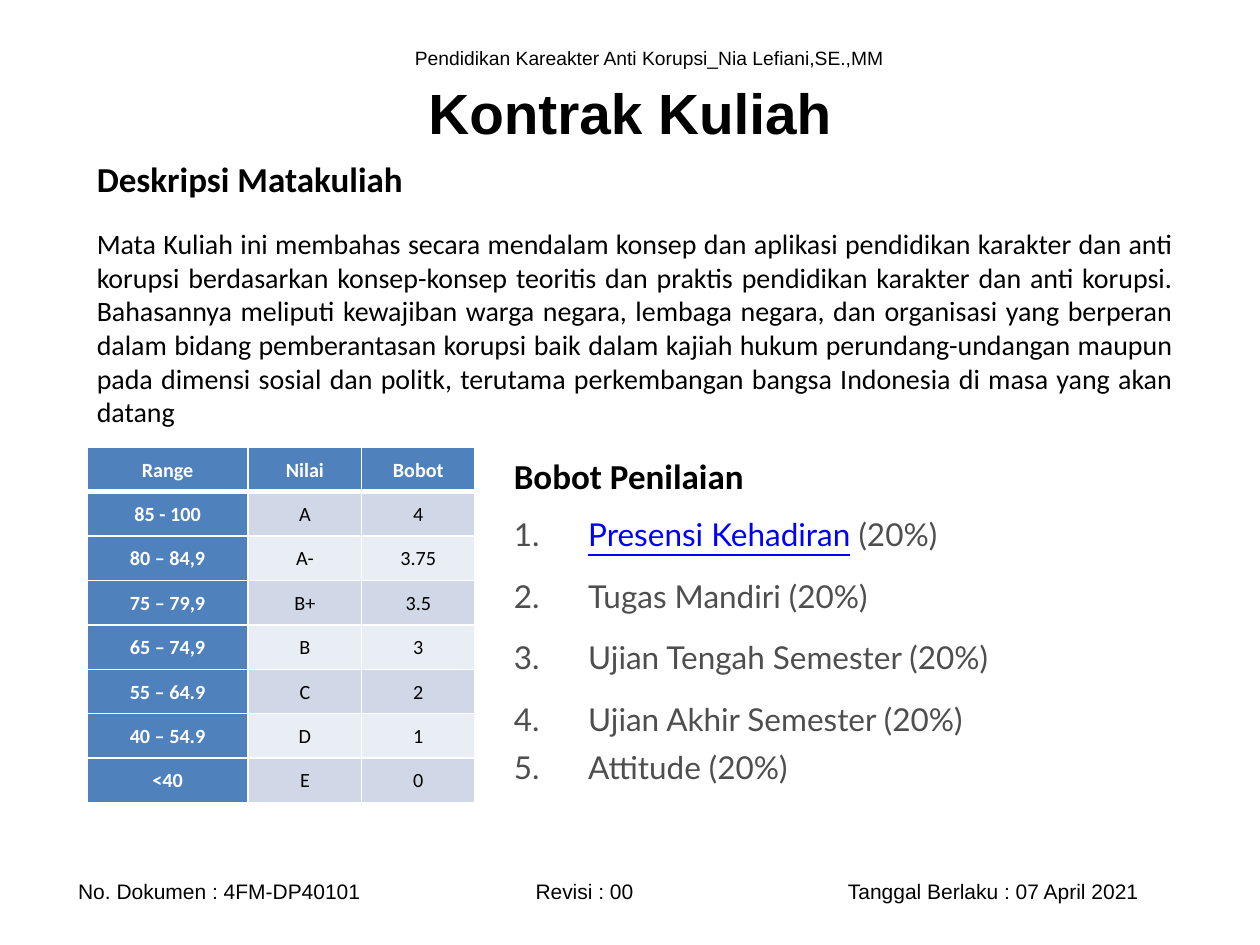
"""Build the course contract slide with its grading table and assessment weights."""
import dataclasses

import lxml.etree
import pptx
import pptx.dml.color
import pptx.enum.text
import pptx.oxml.ns
import pptx.util

ALIGN = pptx.enum.text.PP_ALIGN
MIDDLE = pptx.enum.text.MSO_ANCHOR.MIDDLE
TOP = pptx.enum.text.MSO_ANCHOR.TOP
COLUMNS, ROWS = 100, 75


@dataclasses.dataclass(frozen=True)
class Theme:
    display: str = "Arial"
    body: str = "Calibri"
    list_font: str = "Lato"
    ink: str = "000000"
    white: str = "FFFFFF"
    muted: str = "4E4E4E"
    link: str = "0000FF"
    accent: str = "4F81BD"
    bands: tuple = ("D0D8E8", "E9EDF4")
    title_size: float = 32.4
    heading_size: float = 20
    list_size: float = 18
    body_size: float = 16
    footer_size: float = 12
    table_size: float = 11.5
    header_size: float = 11


def add_xml(parent, tag, **attributes):
    return lxml.etree.SubElement(parent, pptx.oxml.ns.qn(tag), attributes)


class SlideBuilder:
    def __init__(self, deck, theme):
        self.deck = deck
        self.theme = theme
        self.slide = deck.slides.add_slide(deck.slide_layouts[5])

    def place(self, left, top, width, height):
        column = self.deck.slide_width / COLUMNS
        row = self.deck.slide_height / ROWS
        return [int(left * column), int(top * row), int(width * column), int(height * row)]

    def style(self, run, size, font, color, bold=False):
        run.font.size = pptx.util.Pt(size)
        run.font.name = font
        run.font.bold = bold
        run.font.color.rgb = pptx.dml.color.RGBColor.from_string(color)

    def title(self, area, text):
        title = self.slide.shapes.title
        title.left, title.top, title.width, title.height = self.place(*area)
        frame = title.text_frame
        frame.text = text
        frame.auto_size = pptx.enum.text.MSO_AUTO_SIZE.NONE
        frame.vertical_anchor = MIDDLE
        paragraph = frame.paragraphs[0]
        paragraph.alignment = ALIGN.CENTER
        paragraph.line_spacing = 0.9
        self.style(paragraph.runs[0], self.theme.title_size, self.theme.display, self.theme.ink, True)

    def frame(self, area, anchor=TOP):
        frame = self.slide.shapes.add_textbox(*self.place(*area)).text_frame
        frame.word_wrap = True
        frame.vertical_anchor = anchor
        return frame

    def text(self, area, text, size, font, align=ALIGN.LEFT, bold=False, anchor=TOP):
        frame = self.frame(area, anchor)
        frame.text = text
        paragraph = frame.paragraphs[0]
        paragraph.alignment = align
        self.style(paragraph.runs[0], size, font, self.theme.ink, bold)
        return frame

    def heading(self, area, text):
        self.text(area, text, self.theme.heading_size, self.theme.body, bold=True)

    def footer(self, area, parts, inset, stops):
        frame = self.text(area, "\t".join(parts), self.theme.footer_size, self.theme.display, anchor=MIDDLE)
        frame.margin_left = pptx.util.Inches(inset)
        tabs = add_xml(frame.paragraphs[0]._p.get_or_add_pPr(), "a:tabLst")
        for stop in stops:
            add_xml(tabs, "a:tab", pos=str(pptx.util.Inches(stop)), algn="l")

    def numbered_list(self, area, items, indent):
        theme = self.theme
        frame = self.frame(area)
        for index, (label, weight, linked) in enumerate(items):
            paragraph = frame.paragraphs[0] if index == 0 else frame.add_paragraph()
            if index < len(items) - 1:
                paragraph.line_spacing = 1.07
                paragraph.space_before = pptx.util.Pt(6 if index else 0)
                paragraph.space_after = pptx.util.Pt(6)
            properties = paragraph._p.get_or_add_pPr()
            properties.set("marL", str(pptx.util.Inches(indent)))
            properties.set("indent", str(-pptx.util.Inches(indent)))
            add_xml(add_xml(properties, "a:buClr"), "a:srgbClr", val=theme.muted)
            add_xml(properties, "a:buFont", typeface=theme.list_font)
            add_xml(properties, "a:buAutoNum", type="arabicPeriod")
            for text, highlighted in ((label, linked), (f" ({weight})", False)):
                run = paragraph.add_run()
                run.text = text
                self.style(run, theme.list_size, theme.list_font, theme.link if highlighted else theme.muted)
                run.font.underline = highlighted

    def borders(self, cell, bottom):
        properties = cell._tc.get_or_add_tcPr()
        for side, points in (("L", 1), ("R", 1), ("T", 1), ("B", bottom)):
            line = add_xml(properties, f"a:ln{side}", w=str(pptx.util.Pt(points)))
            add_xml(add_xml(line, "a:solidFill"), "a:srgbClr", val=self.theme.white)

    def table(self, area, rows, widths):
        theme = self.theme
        table = self.slide.shapes.add_table(len(rows), len(widths), *self.place(*area)).table
        table.first_col = True
        table.horz_banding = False
        for column, width in zip(table.columns, widths):
            column.width = pptx.util.Inches(width)
        for row_index, values in enumerate(rows):
            for column_index, value in enumerate(values):
                cell = table.cell(row_index, column_index)
                is_header = row_index == 0 or column_index == 0
                cell.text = value
                cell.vertical_anchor = MIDDLE
                cell.margin_left = cell.margin_right = cell.margin_top = cell.margin_bottom = 0
                self.borders(cell, 1 if row_index else 3)
                cell.fill.solid()
                band = theme.accent if is_header else theme.bands[(row_index - 1) % 2]
                cell.fill.fore_color.rgb = pptx.dml.color.RGBColor.from_string(band)
                paragraph = cell.text_frame.paragraphs[0]
                paragraph.alignment = ALIGN.CENTER
                paragraph.line_spacing = 1.07
                color = theme.white if is_header else theme.ink
                self.style(paragraph.runs[0], theme.table_size, theme.body, color, is_header)


DESCRIPTION = (
    "Mata Kuliah ini membahas secara mendalam konsep dan aplikasi pendidikan karakter dan anti korupsi "
    "berdasarkan konsep-konsep teoritis dan praktis pendidikan karakter dan anti korupsi. Bahasannya "
    "meliputi kewajiban warga negara, lembaga negara, dan organisasi yang berperan dalam bidang "
    "pemberantasan korupsi baik dalam kajiah hukum perundang-undangan maupun pada dimensi sosial dan "
    "politk, terutama perkembangan bangsa Indonesia di masa yang akan datang"
)
GRADES = [
    ("Range", "Nilai", "Bobot"),
    ("85 - 100", "A", "4"),
    ("80 – 84,9", "A-", "3.75"),
    ("75 – 79,9", "B+", "3.5"),
    ("65 – 74,9", "B", "3"),
    ("55 – 64.9", "C", "2"),
    ("40 – 54.9", "D", "1"),
    ("<40", "E", "0"),
]
ASSESSMENTS = [
    ("Presensi Kehadiran", "20%", True),
    ("Tugas Mandiri", "20%", False),
    ("Ujian Tengah Semester", "20%", False),
    ("Ujian Akhir Semester", "20%", False),
    ("Attitude", "20%", False),
]
DOCUMENT_DETAILS = ["No. Dokumen : 4FM-DP40101", "Revisi : 00", "Tanggal Berlaku : 07 April 2021"]


def main():
    deck = pptx.Presentation()
    deck.slide_width = pptx.util.Inches(10)
    deck.slide_height = pptx.util.Inches(7.5)
    theme = Theme()
    contract = SlideBuilder(deck, theme)
    contract.text((9.8, 3.1, 83.5, 2.9), "Pendidikan Kareakter Anti Korupsi_Nia Lefiani,SE.,MM",
                  theme.header_size, theme.display, ALIGN.CENTER, anchor=MIDDLE)
    contract.footer((2, 69.2, 94.5, 3), DOCUMENT_DETAILS, 0.42, (3.63, 6.11))
    contract.title((5, 6.1, 90, 6.2), "Kontrak Kuliah")
    contract.heading((6.7, 12, 36.4, 4.4), "Deskripsi Matakuliah")
    contract.text((6.7, 17.5, 87.4, 17.2), DESCRIPTION, theme.body_size, theme.body, ALIGN.JUSTIFY)
    contract.table((6.9, 35.5, 30.8, 28.2), GRADES, (1.28, 0.9, 0.9))
    contract.heading((39.8, 35.6, 36.4, 4.4), "Bobot Penilaian")
    contract.numbered_list((39.8, 40.2, 49.6, 22.9), ASSESSMENTS, 0.59)
    deck.save("out.pptx")


if __name__ == "__main__":
    main()
